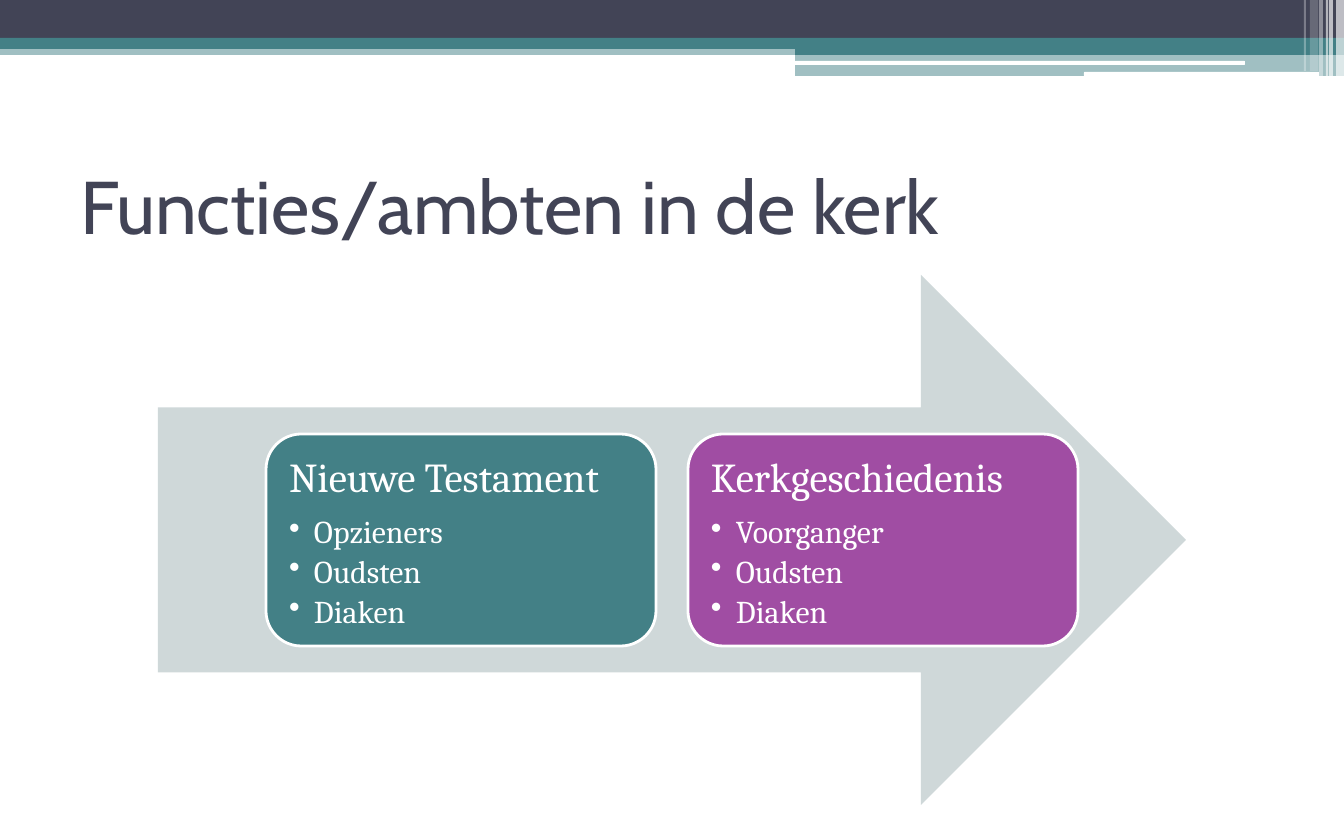
from dataclasses import dataclass

from lxml.etree import SubElement
from pptx import Presentation
from pptx.dml.color import RGBColor
from pptx.enum.shapes import MSO_SHAPE
from pptx.enum.text import MSO_ANCHOR
from pptx.oxml.ns import qn
from pptx.util import Pt

EMU_PER_PX = 914400 / 134.4
COLOURS = {
    "dark": "424456",
    "teal": "438086",
    "purple": "A04DA3",
    "arrow": "CFD8D9",
    "white": "FFFFFF",
}


@dataclass(frozen=True)
class Box:
    left: int
    top: int
    width: int
    height: int

    def emu(self) -> list[int]:
        return [px(n) for n in (self.left, self.top, self.width, self.height)]

    def inset(self, gap: int) -> "Box":
        return Box(self.left + gap, self.top + gap, self.width - 2 * gap, self.height - 2 * gap)


@dataclass(frozen=True)
class Block:
    box: Box
    colour: str
    opacity: int = 100
    kind: MSO_SHAPE = MSO_SHAPE.RECTANGLE


@dataclass(frozen=True)
class Line:
    text: str
    size: int
    font: str
    colour: str
    space_after: int = 0
    line_spacing: float = 1.0
    bullet: bool = False


@dataclass(frozen=True)
class Card:
    left: int
    colour: str
    heading: str
    roles: tuple[str, ...]


HEADER = [
    Block(Box(0, 44, 1344, 11), "teal", 50),
    Block(Box(0, 0, 1344, 38), "dark"),
    Block(Box(0, 38, 1344, 11), "teal"),
    Block(Box(795, 44, 549, 11), "teal"),
    Block(Box(795, 54, 549, 22), "teal", 50),
    Block(Box(795, 61, 450, 4), "white", kind=MSO_SHAPE.ROUNDED_RECTANGLE),
    Block(Box(1084, 72, 235, 4), "white", kind=MSO_SHAPE.ROUNDED_RECTANGLE),
    Block(Box(1336, 0, 8, 77), "white", 65),
    Block(Box(1329, 0, 4, 77), "white", 65),
    Block(Box(1326, 0, 2, 77), "white", 60),
    Block(Box(1319, 0, 4, 77), "white", 40),
    Block(Box(1310, 0, 8, 71), "white", 20),
    Block(Box(1304, 0, 2, 71), "white", 30),
]
ARROW = Block(Box(158, 275, 1028, 530), "arrow", kind=MSO_SHAPE.RIGHT_ARROW)
CARDS = [
    Card(266, "teal", "Nieuwe Testament", ("Opzieners", "Oudsten", "Diaken")),
    Card(688, "purple", "Kerkgeschiedenis", ("Voorganger", "Oudsten", "Diaken")),
]


def px(length: int) -> int:
    return round(length * EMU_PER_PX)


def rgb(name: str) -> RGBColor:
    return RGBColor.from_string(COLOURS[name])


def draw_block(page, block: Block):
    shape = page.shapes.add_shape(block.kind, *block.box.emu())
    shape.shadow.inherit = False
    shape.fill.solid()
    shape.fill.fore_color.rgb = rgb(block.colour)
    shape.line.fill.background()
    if block.opacity < 100:
        colour = shape.fill._xPr.find(f".//{qn('a:srgbClr')}")
        SubElement(colour, qn("a:alpha"), val=str(block.opacity * 1000))
    return shape


def add_bullet(para) -> None:
    """Give the paragraph a hanging bullet."""
    properties = para._p.get_or_add_pPr()
    for name, value in {"marL": px(25), "indent": -px(25), "lvl": 1}.items():
        properties.set(name, str(value))
    SubElement(properties, qn("a:buChar"), char="•")


def draw_text(page, box: Box, lines: list[Line], frame_format: dict) -> None:
    frame = page.shapes.add_textbox(*box.emu()).text_frame
    for name, value in ({"word_wrap": True} | frame_format).items():
        setattr(frame, name, value)
    for index, line in enumerate(lines):
        para = frame.add_paragraph() if index else frame.paragraphs[0]
        para.line_spacing = line.line_spacing
        para.space_after = Pt(line.space_after)
        if line.bullet:
            add_bullet(para)
        span = para.add_run()
        span.text = line.text
        for name, value in {"name": line.font, "size": Pt(line.size)}.items():
            setattr(span.font, name, value)
        span.font.color.rgb = rgb(line.colour)


def draw_card(page, card: Card) -> None:
    box = Box(card.left, 434, 390, 212)
    shape = draw_block(page, Block(box, card.colour, kind=MSO_SHAPE.ROUNDED_RECTANGLE))
    shape.line.color.rgb = rgb("white")
    shape.line.width = Pt(1.5)
    lines = [Line(card.heading, 22, "Cambria", "white", 8, 0.9)]
    lines += [Line(role, 17, "Cambria", "white", 3, 0.9, True) for role in card.roles]
    margins = {f"margin_{side}": px(12) for side in ("left", "top", "right", "bottom")}
    draw_text(page, box.inset(11), lines, margins | {"vertical_anchor": MSO_ANCHOR.TOP})


def main() -> None:
    deck = Presentation()
    for name, value in {"slide_width": px(1344), "slide_height": px(840)}.items():
        setattr(deck, name, value)
    page = deck.slides.add_slide(deck.slide_layouts[6])
    for block in HEADER:
        draw_block(page, block)
    title = Line("Functies/ambten in de kerk", 40, "Cabin", "dark")
    draw_text(page, Box(67, 140, 1210, 130), [title], {"vertical_anchor": MSO_ANCHOR.MIDDLE})
    draw_block(page, ARROW)
    for card in CARDS:
        draw_card(page, card)
    deck.save("out.pptx")


if __name__ == "__main__":
    main()
